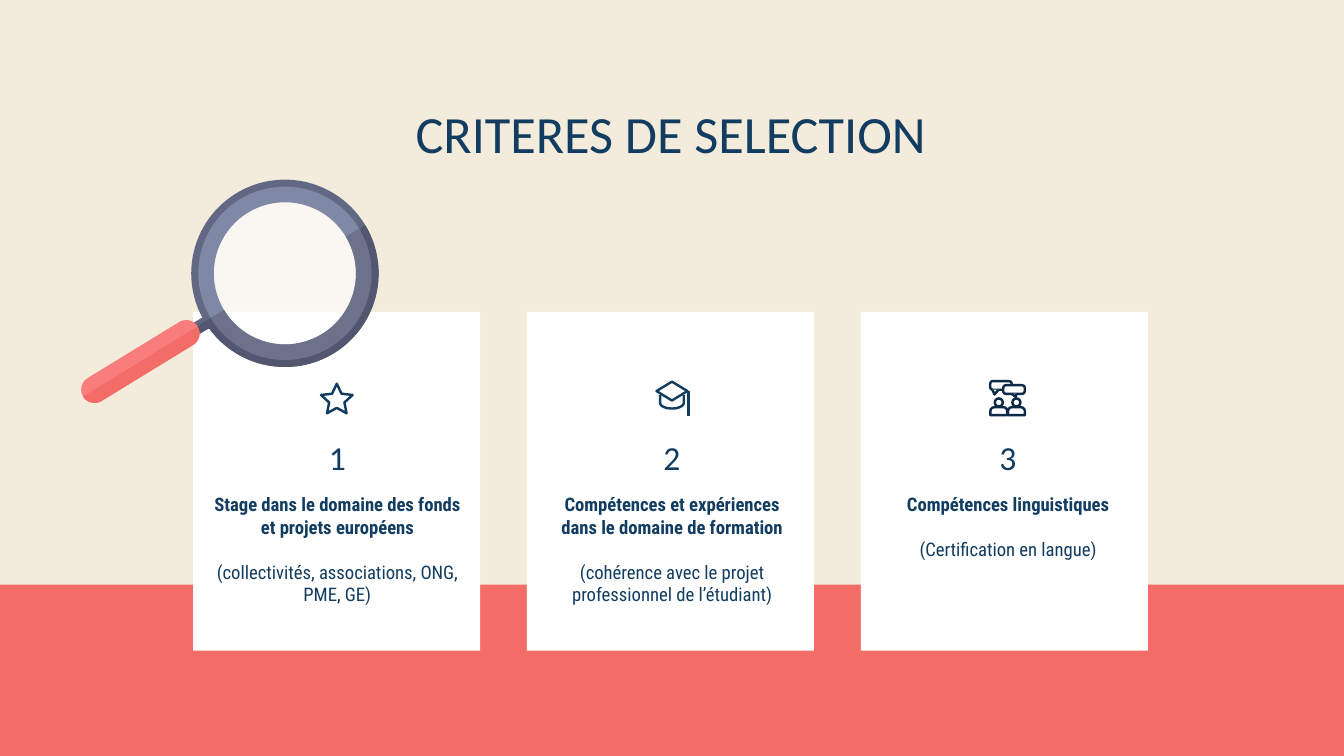
from math import cos, radians, sin

from lxml.etree import SubElement
from pptx import Presentation
from pptx.dml.color import RGBColor
from pptx.enum.shapes import MSO_SHAPE
from pptx.enum.text import MSO_ANCHOR, MSO_AUTO_SIZE, PP_ALIGN
from pptx.oxml.ns import qn
from pptx.util import Emu, Pt

PX = 914.4
NAVY, INK, WHITE, CORAL = "123D60", "0E2A47", "FFFFFF", "F46C68"


def px(n):
    return Emu(round(n * PX))


def rgb(color):
    return RGBColor.from_string(color)


def arc(cx, cy, rx, ry, start, end, steps=12):
    angles = [radians(start + (end - start) * i / steps) for i in range(steps + 1)]
    return [(round(cx + rx * cos(a)), round(cy + ry * sin(a))) for a in angles]


class Deck:
    heading_font = "Calibri"
    body_font = "Roboto Condensed"
    stroke = Pt(1.3)

    def __init__(self, width, height, background):
        self.prs = Presentation()
        self.prs.slide_width, self.prs.slide_height = px(width), px(height)
        self.s = self.prs.slides.add_slide(self.prs.slide_layouts[4])
        self.s.background.fill.solid()
        self.s.background.fill.fore_color.rgb = rgb(background)

    def paint(self, sp, fill, line):
        sp.shadow.inherit = False
        if fill:
            sp.fill.solid()
            sp.fill.fore_color.rgb = rgb(fill)
        else:
            sp.fill.background()
        if line:
            sp.line.color.rgb = rgb(line)
            sp.line.width = self.stroke
            SubElement(sp.line._get_or_add_ln(), qn("a:round"))
        else:
            sp.line.fill.background()
        return sp

    def shape(self, kind, x, y, w, h, fill=None, line=None, adjust=(), alpha=None):
        sp = self.s.shapes.add_shape(kind, px(x), px(y), px(w), px(h))
        for i, value in enumerate(adjust):
            sp.adjustments[i] = value
        self.paint(sp, fill, line)
        if alpha:
            color = sp._element.spPr.find(qn("a:solidFill"))[0]
            SubElement(color, qn("a:alpha")).set("val", str(alpha * 1000))
        return sp

    def disc(self, kind, cx, cy, radius, **style):
        return self.shape(kind, cx - radius, cy - radius, 2 * radius, 2 * radius, **style)

    def outline(self, points, fill=None, line=None, close=True):
        builder = self.s.shapes.build_freeform(*points[0], scale=PX)
        builder.add_line_segments(points[1:], close=close)
        return self.paint(builder.convert_to_shape(), fill, line)

    def set_text(self, sp, text, size, font, anchor):
        tf = sp.text_frame
        tf.text = text
        tf.word_wrap = True
        tf.auto_size = MSO_AUTO_SIZE.NONE
        tf.vertical_anchor = anchor
        tf.margin_left = tf.margin_right = tf.margin_top = tf.margin_bottom = px(100)
        for p in tf.paragraphs:
            p.alignment = PP_ALIGN.CENTER
            p.space_before = Pt(0)
            for r in p.runs:
                r.font.name, r.font.size = font, Pt(size)
                r.font.bold = False
                r.font.color.rgb = rgb(NAVY)
        return tf

    def place(self, sp, x, y, w, h):
        sp.left, sp.top, sp.width, sp.height = px(x), px(y), px(w), px(h)
        self.s.shapes._spTree.append(sp._element)

    def title(self, text, x, y, w, h):
        sp = self.s.shapes.title
        self.place(sp, x, y, w, h)
        self.set_text(sp, text, 28, self.heading_font, MSO_ANCHOR.MIDDLE)

    def body(self, idx, heading, detail, x, y, w, h):
        sp = self.s.placeholders[idx]
        self.place(sp, x, y, w, h)
        tf = self.set_text(sp, f"{heading}\n{detail}", 10, self.body_font, MSO_ANCHOR.TOP)
        for p in tf.paragraphs:
            pPr = p._p.get_or_add_pPr()
            pPr.set("marL", "0")
            pPr.set("indent", "0")
            SubElement(pPr, qn("a:buNone"))
        first, second = tf.paragraphs
        first.runs[0].font.bold = True
        second.space_before = Pt(12)

    def number(self, text, x, y, w, h):
        sp = self.s.shapes.add_textbox(px(x), px(y), px(w), px(h))
        self.set_text(sp, text, 18, self.heading_font, MSO_ANCHOR.BOTTOM)

    def magnifier(self):
        self.outline([(1560, 2330), (1610, 2410), (910, 2830), (860, 2750)], "626884")
        grip = self.shape(MSO_SHAPE.ROUNDED_RECTANGLE, 545, 2590, 1000, 200, "F97D7D", adjust=[0.5])
        grip.rotation = -31.5
        cx, cy = 2120, 2034
        self.disc(MSO_SHAPE.OVAL, cx, cy, 640, fill=WHITE, alpha=63)
        self.disc(MSO_SHAPE.DONUT, cx, cy, 697, fill="626884", adjust=[0.05])
        self.disc(MSO_SHAPE.DONUT, cx, cy, 645, fill="7F88A5", adjust=[0.09])
        self.outline([(1520, 2390), (1560, 2440), (1490, 2480), (1470, 2430)], "52576F")
        shade = arc(1386, 2481, 100, 100, -31.5, 58.5) + arc(704, 2899, 100, 100, 58.5, 148.5)
        self.outline(shade, CORAL)
        for radius, fill, thickness in [(697, "52576F", 0.04), (645, "6B728A", 0.09)]:
            self.disc(MSO_SHAPE.BLOCK_ARC, cx, cy, radius, fill=fill,
                      adjust=[329 * 0.6, 149 * 0.6, thickness])

    def star(self):
        self.shape(MSO_SHAPE.STAR_5_POINT, 2388, 2855, 236, 220, line=NAVY, adjust=[0.24])

    def graduation_cap(self):
        self.outline([(5000, 2840), (5115, 2910), (5000, 2980), (4885, 2910)], line=NAVY)
        bowl = [(5088, 2940)] + arc(5000, 3000, 88, 40, 0, 180) + [(4912, 2940)]
        self.outline(bowl, line=NAVY, close=False)
        self.outline([(5122, 2912), (5122, 3095)], line=NAVY, close=False)

    def conversation(self):
        bubbles = [
            (7368, 2836, [(7385, 2900), (7400, 2935), (7430, 2900)]),
            (7465, 2866, [(7527, 2930), (7558, 2955), (7562, 2930)]),
        ]
        for x, y, tail in bubbles:
            self.shape(MSO_SHAPE.ROUNDED_RECTANGLE, x, y, 160, 64, WHITE, INK, [0.3])
            self.outline(tail, WHITE, INK, close=False)
        for cx in (7432, 7563):
            self.shape(MSO_SHAPE.ROUND_2_SAME_RECTANGLE, cx - 63, 3030, 126, 60, WHITE, INK, [0.5, 0])
            self.disc(MSO_SHAPE.OVAL, cx, 2995, 30, fill=WHITE, line=INK)

    def save(self):
        for sp in list(self.s.placeholders):
            if not sp.text_frame.text:
                sp._element.getparent().remove(sp._element)
        self.prs.save("out.pptx")


def main():
    deck = Deck(10000, 5625, "F3ECDD")
    deck.shape(MSO_SHAPE.RECTANGLE, 0, 4350, 10000, 1275, CORAL)
    deck.title("CRITERES DE SELECTION", 1680, 470, 6620, 1030)
    criteria = [
        (1480, "Stage dans le domaine des fonds et projets européens",
         "(collectivités, associations, ONG, PME, GE)"),
        (3970, "Compétences et expériences dans le domaine de formation",
         "(cohérence avec le projet professionnel de l’étudiant)"),
        (6470, "Compétences linguistiques", "(Certification en langue)"),
    ]
    for i, (x, heading, detail) in enumerate(criteria):
        deck.shape(MSO_SHAPE.RECTANGLE, 1437 + 2484 * i, 2320, 2136, 2522, WHITE)
        deck.body(i + 1, heading, detail, x, 3570, 2060, 1220)
        deck.number(str(i + 1), x, 2940, 2060, 710)
    deck.magnifier()
    deck.star()
    deck.graduation_cap()
    deck.conversation()
    deck.save()


if __name__ == "__main__":
    main()
